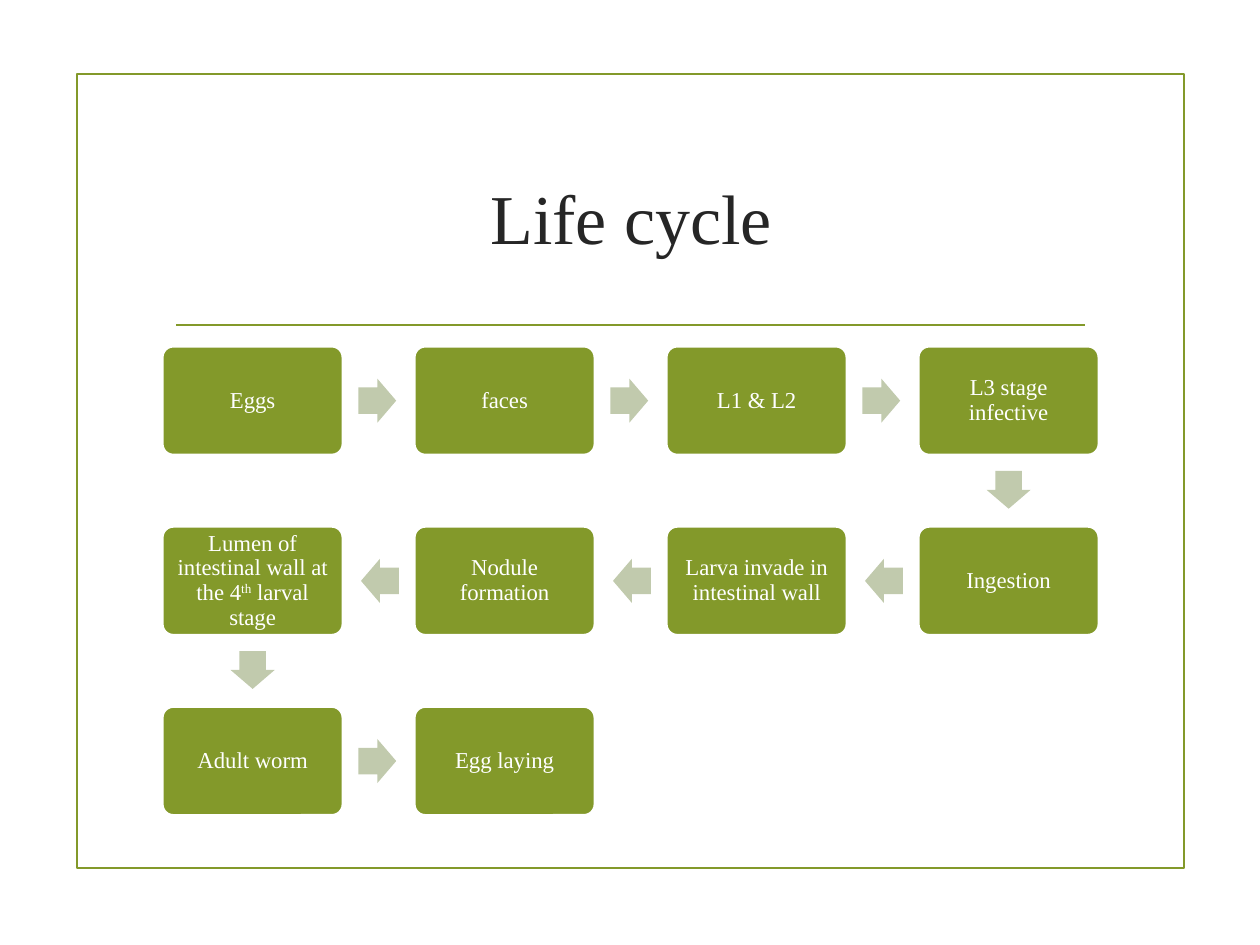
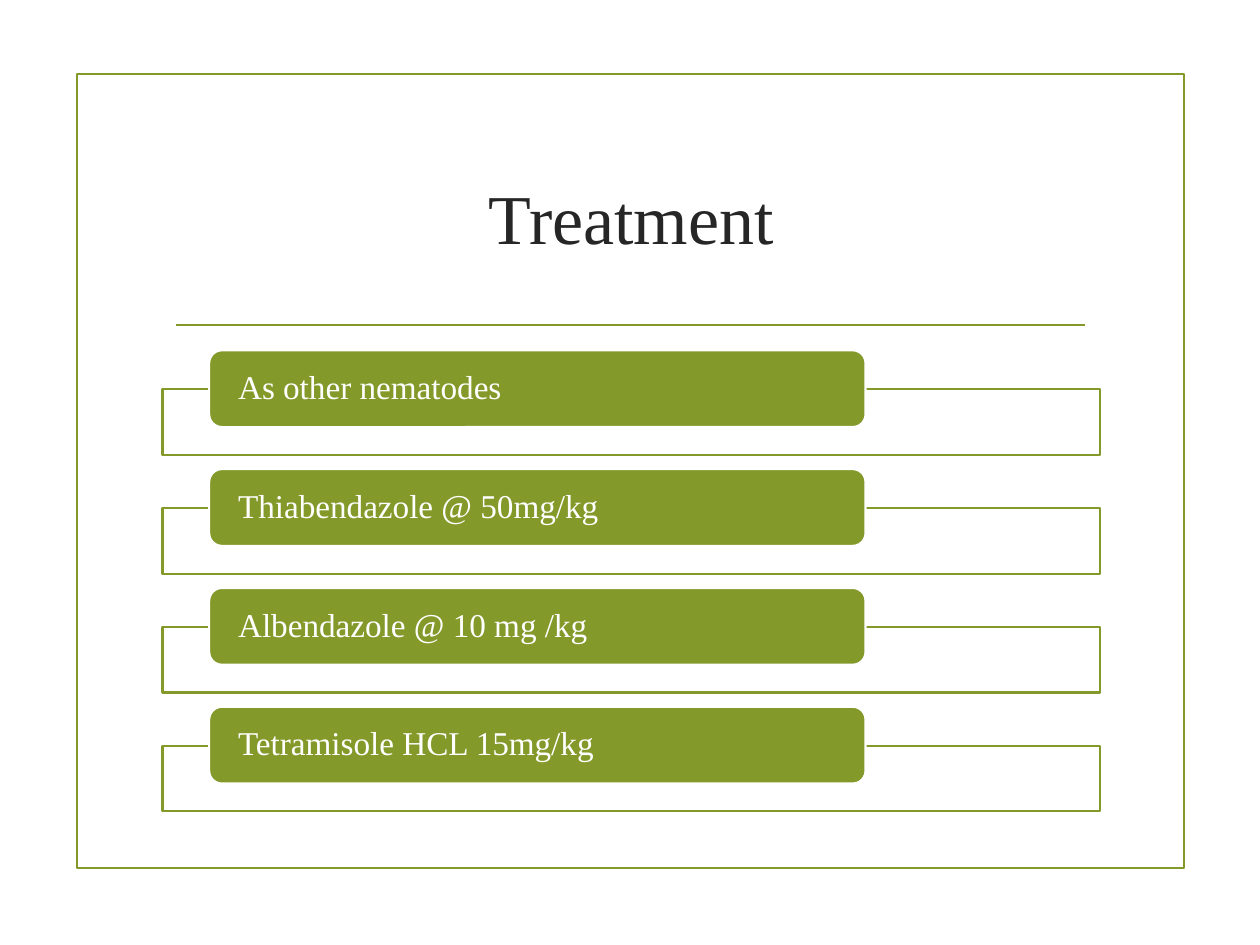
from lxml import etree
from pptx import Presentation
from pptx.dml.color import RGBColor
from pptx.enum.shapes import MSO_CONNECTOR, MSO_SHAPE
from pptx.enum.text import MSO_ANCHOR, PP_ALIGN
from pptx.oxml.ns import qn
from pptx.util import Inches, Pt

RECT, ROUND = MSO_SHAPE.RECTANGLE, MSO_SHAPE.ROUNDED_RECTANGLE
ARROW, STRAIGHT = MSO_SHAPE.RIGHT_ARROW, MSO_CONNECTOR.STRAIGHT
LEFT, CENTER, MIDDLE = PP_ALIGN.LEFT, PP_ALIGN.CENTER, MSO_ANCHOR.MIDDLE

# Content: a tuple holds runs, the second one raised
STAGES = [
    "Eggs", "faces", "L1 & L2", "L3 stage infective",
    "Ingestion", "Larva invade in intestinal wall", "Nodule formation",
    ("Lumen of intestinal wall at the 4", "th", " larval stage"),
    "Adult worm", "Egg laying",
]
DRUGS = [
    "As other nematodes", "Thiabendazole @ 50mg/kg",
    "Albendazole @ 10 mg /kg", "Tetramisole HCL 15mg/kg",
]

# Shared style
FONT = "Times New Roman"
GREEN, PALE, WHITE, DARK = "83992A", "C1CAAD", "FFFFFF", "262626"
EDGE = Pt(1.25)
LEFT_X, WIDE = 1.29, 7.44

# Stage grid: rows alternate in direction
COLS, BOX_W, BOX_H = 4, 1.43, 0.86
STEP_X, STEP_Y, TOP = 2, 1.43, 2.75
ARROW_W, ARROW_H, ALONG = 0.3, 0.35, 0.495

# Drug rows
ROW_TOP, ROW_STEP = 2.78, 0.943


def rgb(code):
    return RGBColor.from_string(code)


def add_box(slide, kind, at, fill=None, line=None):
    box = slide.shapes.add_shape(kind, *(Inches(n) for n in at))
    box.shadow.inherit = False
    if fill:
        box.fill.solid()
        box.fill.fore_color.rgb = rgb(fill)
    else:
        box.fill.background()
    if line:
        box.line.color.rgb = rgb(line)
        box.line.width = EDGE
    else:
        box.line.fill.background()
    return box


def style(para, size, color, align):
    para.alignment = align
    for run in para.runs:
        run.font.name = FONT
        run.font.size = Pt(size)
        run.font.color.rgb = rgb(color)


def write(box, text, size, align, side, edge):
    frame = box.text_frame
    frame.word_wrap = True
    frame.vertical_anchor = MIDDLE
    frame.margin_left = frame.margin_right = Inches(side)
    frame.margin_top = frame.margin_bottom = Inches(edge)
    para = frame.paragraphs[0]
    para.line_spacing = 0.9
    parts = (text,) if isinstance(text, str) else text
    for i, part in enumerate(parts):
        run = para.add_run()
        run.text = part
        if i == 1:
            run._r.get_or_add_rPr().set("baseline", "30000")
    style(para, size, WHITE, align)


def add_page(deck, text):
    slide = deck.slides.add_slide(deck.slide_layouts[5])
    # Frame and rule
    add_box(slide, RECT, (0.61, 0.59, 8.79, 6.3), line=GREEN)
    rule = slide.shapes.add_connector(
        STRAIGHT, Inches(1.4), Inches(2.58), Inches(8.61), Inches(2.58))
    rule.line.color.rgb = rgb(GREEN)
    rule.line.width = EDGE
    etree.SubElement(rule._element.spPr, qn("a:effectLst"))
    # Title
    title = slide.shapes.title
    title.left, title.top = Inches(LEFT_X), Inches(1)
    title.width, title.height = Inches(WIDE), Inches(1.43)
    title.text_frame.text = text
    title.text_frame.vertical_anchor = MIDDLE
    style(title.text_frame.paragraphs[0], 40, DARK, CENTER)
    return slide


def center(i):
    row, col = divmod(i, COLS)
    if row % 2:
        col = COLS - 1 - col
    return (LEFT_X + col * STEP_X + BOX_W / 2,
            TOP + row * STEP_Y + BOX_H / 2)


def add_cycle(slide):
    for i, stage in enumerate(STAGES):
        x, y = center(i)
        box = add_box(slide, ROUND,
                      (x - BOX_W / 2, y - BOX_H / 2, BOX_W, BOX_H),
                      GREEN, WHITE)
        box.adjustments[0] = 0.1
        write(box, stage, 13, CENTER, 0.05, 0.05)
        if i == len(STAGES) - 1:
            break
        # Arrow to the next stage
        to_x, to_y = center(i + 1)
        mid_x = x + (to_x - x) * ALONG
        mid_y = y + (to_y - y) * ALONG
        arrow = add_box(slide, ARROW,
                        (mid_x - ARROW_W / 2, mid_y - ARROW_H / 2,
                         ARROW_W, ARROW_H), PALE)
        arrow.adjustments[0], arrow.adjustments[1] = 0.6, 0.5
        arrow.rotation = 90 if to_y > y else 180 if to_x < x else 0


def add_drugs(slide):
    for i, drug in enumerate(DRUGS):
        y = ROW_TOP + i * ROW_STEP
        back = add_box(slide, RECT, (LEFT_X, y + 0.31, WIDE, 0.52),
                       WHITE, GREEN)
        tint = back._element.spPr.find(qn("a:solidFill"))[0]
        etree.SubElement(tint, qn("a:alpha"), val="90000")
        label = add_box(slide, ROUND, (1.66, y, 5.21, 0.61), GREEN, WHITE)
        write(label, drug, 19, LEFT, 0.2, 0)


def main():
    deck = Presentation()
    deck.slide_width, deck.slide_height = Inches(10), Inches(7.5)
    add_cycle(add_page(deck, "Life cycle"))
    add_drugs(add_page(deck, "Treatment"))
    deck.save("out.pptx")


if __name__ == "__main__":
    main()
